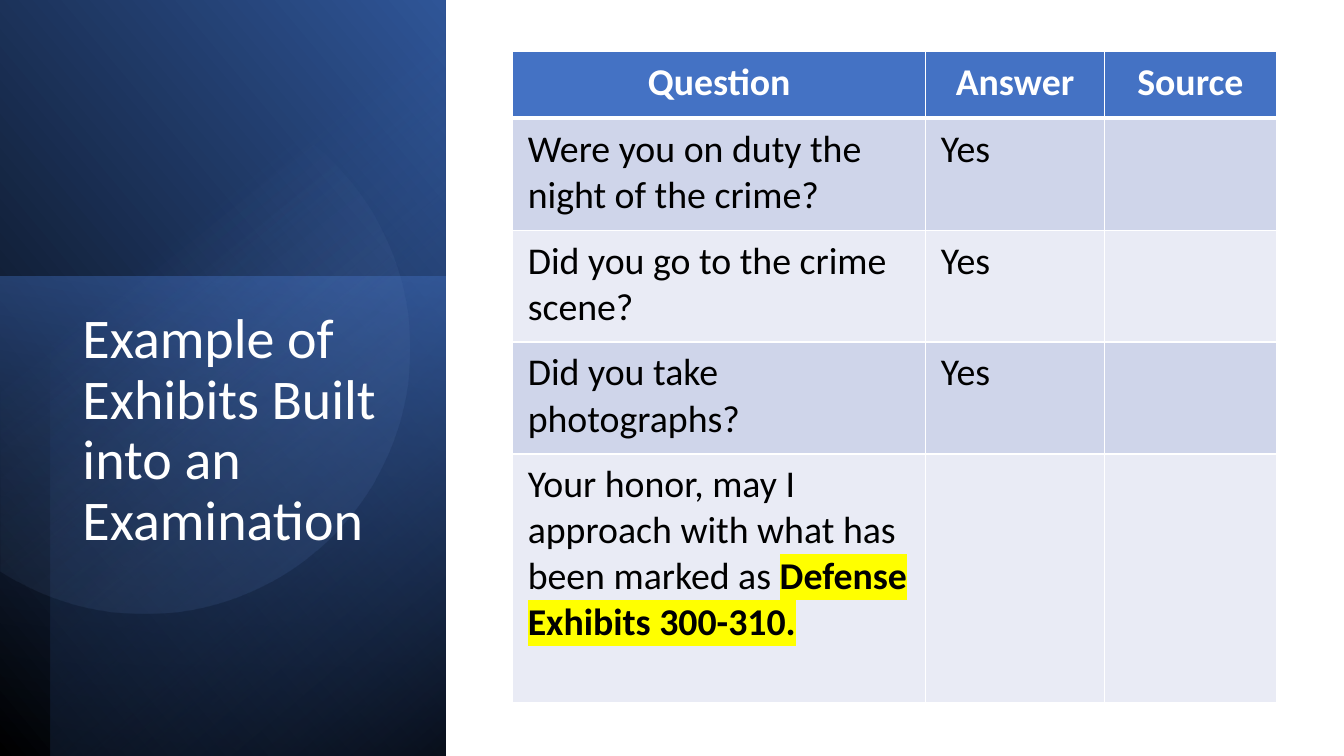
from math import acos, cos, pi, radians, sin

from lxml import etree
from pptx import Presentation
from pptx.dml.color import RGBColor
from pptx.enum.shapes import MSO_SHAPE as SHAPE
from pptx.enum.text import MSO_ANCHOR as ANCHOR, PP_ALIGN as ALIGN
from pptx.oxml.ns import qn
from pptx.util import Cm, Pt

WHITE = RGBColor(0xFF, 0xFF, 0xFF)
BLACK = RGBColor(0x00, 0x00, 0x00)
BLUE = RGBColor(0x44, 0x72, 0xC4)
DEEP_BLUE = RGBColor(0x2F, 0x55, 0x97)
NAVY = RGBColor(0x20, 0x38, 0x64)
PALE_BLUE = RGBColor(0x8F, 0xAA, 0xDC)
BAND_DARK = RGBColor(0xCF, 0xD5, 0xEA)
BAND_LIGHT = RGBColor(0xE9, 0xEB, 0xF5)
YELLOW = RGBColor(0xFF, 0xFF, 0x00)


def add_color(parent, color, alpha=100):
    clr = etree.SubElement(parent, qn("a:srgbClr"), val=str(color))
    if alpha < 100:
        etree.SubElement(clr, qn("a:alpha"), val=str(alpha * 1000))


class ExamSlide:
    font = "Calibri"

    def __init__(self, slide):
        self.shapes = slide.shapes

    def style(self, p, size, color, bold=False):
        p.font.name, p.font.size, p.font.bold = self.font, Pt(size), bold
        p.font.color.rgb = color

    def gradient(self, sp, stops, angle):
        """Fill with (position, color, opacity) stops, all in percent."""
        sp.shadow.inherit = False
        sp.line.fill.background()
        sp.fill.gradient()
        grad = sp._element.spPr.find(qn("a:gradFill"))
        grad.set("rotWithShape", "1")
        for child in list(grad):
            grad.remove(child)
        stop_list = etree.SubElement(grad, qn("a:gsLst"))
        for pos, color, alpha in stops:
            gs = etree.SubElement(stop_list, qn("a:gs"), pos=str(pos * 1000))
            add_color(gs, color, alpha)
        etree.SubElement(grad, qn("a:lin"), ang=str(angle * 60000), scaled="0")

    def panel(self, box, rotation, stops, angle, flip=False):
        sp = self.shapes.add_shape(SHAPE.RECTANGLE, *map(Cm, box))
        sp.rotation = rotation
        if flip:
            sp._element.spPr.xfrm.set("flipH", "1")
        self.gradient(sp, stops, angle)

    def cut_circle(self, center, radius, pivot, rotation, stops, angle, steps=96):
        """Circle cut off at the slide's left edge, turned about the pivot."""
        half, turn = acos(-center[0] / radius), radians(rotation)
        dx, dy = center[0] - pivot[0], center[1] - pivot[1]
        x0 = pivot[0] + dx * cos(turn) + dy * sin(turn)
        y0 = pivot[1] - dx * sin(turn) + dy * cos(turn)
        angles = [half * (2 * i / steps - 1) - turn for i in range(steps + 1)]
        points = [(Cm(x0 + radius * cos(a)), Cm(y0 + radius * sin(a)))
                  for a in angles]
        builder = self.shapes.build_freeform(*points[0])
        builder.add_line_segments(points[1:], close=True)
        sp = builder.convert_to_shape()
        sp.rotation = rotation
        self.gradient(sp, stops, angle)

    def title(self, box, text):
        tf = self.shapes.add_textbox(*map(Cm, box)).text_frame
        tf.word_wrap = True
        tf.vertical_anchor = ANCHOR.TOP
        p = tf.paragraphs[0]
        p.text = text
        p.line_spacing = 0.9
        self.style(p, 40, WHITE)

    def borders(self, cell, top, bottom):
        tc_pr = cell._tc.get_or_add_tcPr()
        for side, width in (("L", 1), ("R", 1), ("T", top), ("B", bottom)):
            ln = etree.SubElement(tc_pr, qn(f"a:ln{side}"), w=str(Pt(width)))
            add_color(etree.SubElement(ln, qn("a:solidFill")), WHITE)

    def cell(self, cell, row, parts):
        """Write (text, highlighted) parts into one table cell."""
        header = row == 0
        self.borders(cell, 3 if row == 1 else 1, 3 if header else 1)
        cell.fill.solid()
        cell.fill.fore_color.rgb = (
            BLUE if header else BAND_DARK if row % 2 else BAND_LIGHT)
        cell.margin_left = cell.margin_right = Cm(0.38)
        cell.margin_top = cell.margin_bottom = Cm(0.2)
        p = cell.text_frame.paragraphs[0]
        p.alignment = ALIGN.CENTER if header else ALIGN.LEFT
        self.style(p, 27, WHITE if header else BLACK, header)
        for text, marked in parts:
            r = p.add_run()
            r.text = text
            if marked:
                r.font.bold = True
                mark = etree.SubElement(r._r.get_or_add_rPr(), qn("a:highlight"))
                add_color(mark, YELLOW)

    def table(self, left, top, widths, heights, rows):
        tbl = self.shapes.add_table(
            len(heights), len(widths), Cm(left), Cm(top),
            Cm(sum(widths)), Cm(sum(heights))).table
        for column, width in zip(tbl.columns, widths):
            column.width = Cm(width)
        for i, (height, row) in enumerate(zip(heights, rows)):
            tbl.rows[i].height = Cm(height)
            for j, content in enumerate(row):
                parts = [(content, False)] if isinstance(content, str) else content
                self.cell(tbl.cell(i, j), i, [part for part in parts if part[0]])


def main():
    prs = Presentation()
    prs.slide_width, prs.slide_height = Cm(33.87), Cm(19.05)
    s = ExamSlide(prs.slides.add_slide(prs.slide_layouts[6]))

    # Layered gradients of the left panel
    s.panel((-3.94, 3.94, 19.1, 11.23), 90,
            [(0, BLACK, 100), (100, DEEP_BLUE, 100)], 310, flip=True)
    s.panel((-0.43, 7.39, 12.09, 11.23), 270,
            [(0, BLUE, 50), (100, NAVY, 0)], 190)
    s.panel((-3.28, 4.55, 19.05, 9.96), 270,
            [(0, BLACK, 59), (69, BLUE, 0)], 220, flip=True)
    s.cut_circle((3.63, 8.81), 6.68, (4.6, 9), 101.6,
                 [(39, PALE_BLUE, 0), (100, DEEP_BLUE, 26)], 310)

    # Title
    s.title((1.83, 7.7, 8, 8.53), "Example of Exhibits Built into an Examination")

    # Examination table
    s.table(12.92, 1.3, [10.41, 4.5, 4.34], [1.68, 2.82, 2.82, 2.82, 6.27], [
        ("Question", "Answer", "Source"),
        ("Were you on duty the night of the crime?", "Yes", ""),
        ("Did you go to the crime scene?", "Yes", ""),
        ("Did you take photographs?", "Yes", ""),
        ([("Your honor, may I approach with what has been marked as ", False),
          ("Defense Exhibits 300-310.", True)], "", ""),
    ])

    prs.save("out.pptx")


if __name__ == "__main__":
    main()
